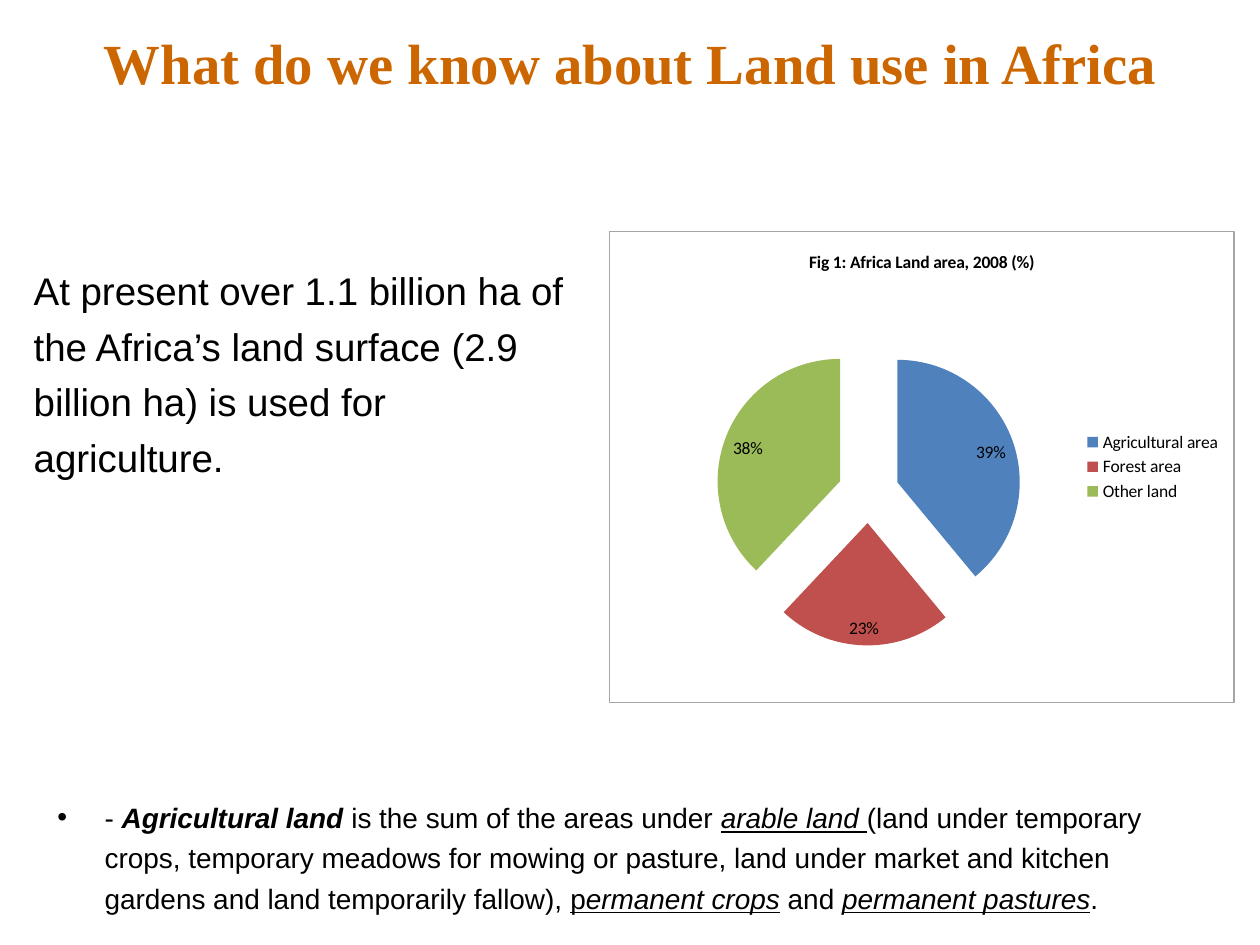
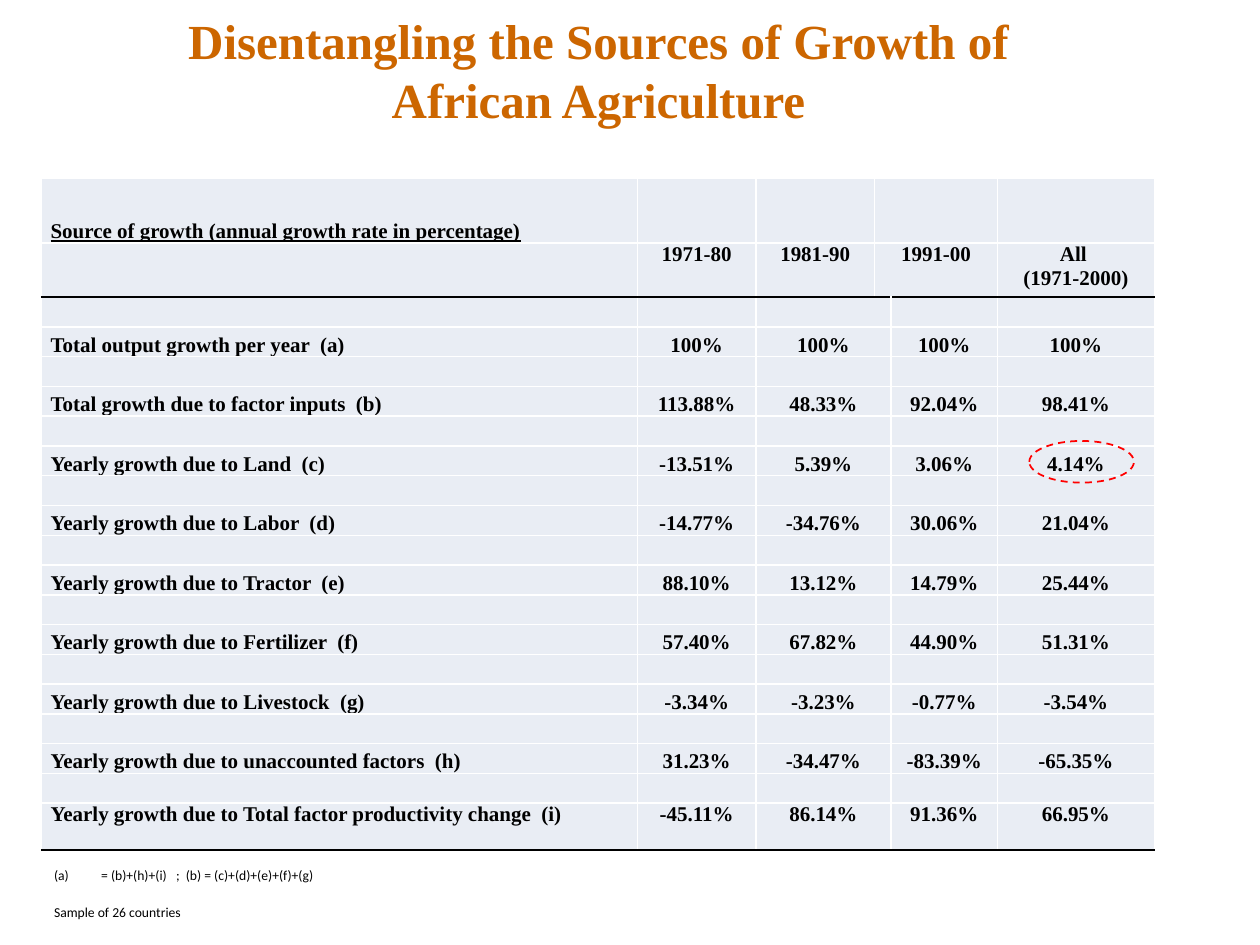
"""Build two slides on land use and sources of growth in African agriculture."""
import pptx
import pptx.util
import pptx.dml.color
import pptx.chart.data
import pptx.enum.chart
import pptx.enum.dml
import pptx.enum.shapes
import pptx.enum.text
import pptx.oxml
import pptx.oxml.ns
from lxml import etree

Cm, Pt = pptx.util.Cm, pptx.util.Pt
RGB = pptx.dml.color.RGBColor.from_string
qn = pptx.oxml.ns.qn
ANCHOR = pptx.enum.text.MSO_ANCHOR
CENTER = pptx.enum.text.PP_ALIGN.CENTER

COLORS = {
    "title": "CC6600", "text": "000000", "cell": "E9EDF4", "grid": "FFFFFF",
    "rule": "000000", "mark": "FF0000", "frame": "A6A6A6",
    "Agricultural area": "4F81BD", "Forest area": "C0504D", "Other land": "9BBB59",
}
SERIF, SANS, SMALL = "Times New Roman", "Arial", "Calibri"


def put(p, text, size, font, color="text", bold=False, italic=False, underline=False, align=None):
    """Add a formatted run to a paragraph."""
    r = p.add_run()
    r.text = text
    r.font.size, r.font.name = Pt(size), font
    r.font.color.rgb = RGB(COLORS[color])
    r.font.bold, r.font.italic, r.font.underline = bold, italic, underline
    if align is not None:
        p.alignment = align


def hang(p, tag, **attrs):
    """Give a paragraph a hanging indent and a bullet."""
    pPr = p._p.get_or_add_pPr()
    pPr.set("marL", str(Cm(0.95)))
    pPr.set("indent", str(-Cm(0.95)))
    etree.SubElement(pPr, qn(tag), **attrs)


prs = pptx.Presentation()
prs.slide_width, prs.slide_height = Cm(25.4), Cm(19.05)

titles = [
    ("What do we know about Land use in Africa", 32.4, 1.27, 22.86, 2.11),
    ("Disentangling the Sources of Growth of African Agriculture", 28, 2.54, 19.05, 2.41),
]
slides = []
for text, size, left, width, height in titles:
    s = prs.slides.add_slide(prs.slide_layouts[6])
    tf = s.shapes.add_textbox(Cm(left), Cm(0.2), Cm(width), Cm(height)).text_frame
    tf.word_wrap = True
    tf.vertical_anchor = ANCHOR.MIDDLE
    put(tf.paragraphs[0], text, size, SERIF, "title", bold=True, align=CENTER)
    slides.append(s)
land, growth = slides

areas = {"Agricultural area": 39, "Forest area": 23, "Other land": 38}
data = pptx.chart.data.CategoryChartData()
data.categories = list(areas)
data.add_series("Series 1", list(areas.values()))
chart = land.shapes.add_chart(pptx.enum.chart.XL_CHART_TYPE.PIE, Cm(12.27), Cm(4.65),
                              Cm(12.62), Cm(9.52), data).chart
chart.font.size, chart.font.name = Pt(10), SMALL
chart.font.color.rgb = RGB(COLORS["text"])
chart.has_title = True
put(chart.chart_title.text_frame.paragraphs[0], "Fig 1: Africa Land area, 2008 (%)", 10, SMALL, bold=True)
chart.chart_title.include_in_layout = False
chart.has_legend = True
chart.legend.position = pptx.enum.chart.XL_LEGEND_POSITION.RIGHT
chart.legend.include_in_layout = False

plot = chart.plots[0]
plot.vary_by_categories = True
plot.has_data_labels = True
labels = plot.data_labels
labels.show_percentage, labels.show_value = True, False
labels.number_format, labels.number_format_is_linked = "0%", False
labels.position = pptx.enum.chart.XL_LABEL_POSITION.INSIDE_END
for i, area in enumerate(areas):
    fill = plot.series[0].points[i].format.fill
    fill.solid()
    fill.fore_color.rgb = RGB(COLORS[area])

space = chart._chartSpace
explosion = etree.Element(qn("c:explosion"), val="25")
space.find(".//" + qn("c:dPt")).addprevious(explosion)
area_xml = space.find(".//" + qn("c:plotArea"))
for old in area_xml.findall(qn("c:layout")):
    area_xml.remove(old)
layout = etree.Element(qn("c:layout"))
manual = etree.SubElement(layout, qn("c:manualLayout"))
for tag, val in [("layoutTarget", "inner"), ("xMode", "edge"), ("yMode", "edge"),
                 ("x", "0.17"), ("y", "0.16"), ("w", "0.49"), ("h", "0.79")]:
    etree.SubElement(manual, qn("c:" + tag), val=val)
area_xml.insert(0, layout)
frame = pptx.oxml.parse_xml(
    f'<c:spPr {pptx.oxml.ns.nsdecls("c", "a")}><a:noFill/><a:ln w="{Pt(0.75)}"><a:solidFill>'
    f'<a:srgbClr val="{COLORS["frame"]}"/></a:solidFill></a:ln></c:spPr>')
space.find(qn("c:txPr")).addprevious(frame)

plain, italic, under = {}, {"italic": True}, {"underline": True}
both = {**italic, **under}
statement = [("At present over 1.1 billion ha of the Africa’s land surface (2.9 billion ha) "
              "is used for agriculture.", plain)]
definition = [
    ("- ", plain), ("Agricultural land ", {"bold": True, "italic": True}),
    ("is the sum of the areas under ", plain), ("arable land", both), (" ", under),
    ("(land under temporary crops, temporary meadows for mowing or pasture, land under market "
     "and kitchen gardens and land temporarily fallow), ", plain),
    ("p", under), ("ermanent crops", both), (" ", italic), ("and ", plain),
    ("permanent pastures", both), (".", plain),
]
for runs, size, left, top, width, height in [(statement, 22, 0.43, 5.08, 11.23, 4.88),
                                             (definition, 16, 0.91, 15.88, 23.85, 2.97)]:
    tf = land.shapes.add_textbox(Cm(left), Cm(top), Cm(width), Cm(height)).text_frame
    tf.word_wrap = True
    p = tf.paragraphs[0]
    p.line_spacing, p.space_before = 1.2, Pt(size * 0.2)
    for text, style in runs:
        put(p, text, size, SANS, **style)
    if runs is definition:
        hang(p, "a:buFont", typeface=SANS)
        etree.SubElement(p._p.pPr, qn("a:buChar"), char="•")

sources = [
    ("Total output growth per year", "100%", "100%", "100%", "100%"),
    ("Total growth due to factor inputs", "113.88%", "48.33%", "92.04%", "98.41%"),
    ("Yearly growth due to Land", "-13.51%", "5.39%", "3.06%", "4.14%"),
    ("Yearly growth due to Labor", "-14.77%", "-34.76%", "30.06%", "21.04%"),
    ("Yearly growth due to Tractor", "88.10%", "13.12%", "14.79%", "25.44%"),
    ("Yearly growth due to Fertilizer", "57.40%", "67.82%", "44.90%", "51.31%"),
    ("Yearly growth due to Livestock", "-3.34%", "-3.23%", "-0.77%", "-3.54%"),
    ("Yearly growth due to unaccounted factors", "31.23%", "-34.47%", "-83.39%", "-65.35%"),
    ("Yearly growth due to Total factor productivity change", "-45.11%", "86.14%", "91.36%", "66.95%"),
]
rows = [["Source of growth (annual growth rate in percentage)", "", "", "", ""],
        ["", "1971-80", "1981-90", "1991-00", "All \n(1971-2000)"]]
for letter, (label, *values) in zip("abcdefghi", sources):
    rows += [[""] * 5, [f"{label}  ({letter})", *values]]
widths = [12.01, 2.39, 2.39, 0.33, 2.15, 3.16]
heights = [1.3, 1.09] + [0.6] * 17 + [0.94]
last = len(rows) - 1

table = growth.shapes.add_table(len(rows), len(widths), Cm(0.84), Cm(3.6),
                                Cm(sum(widths)), Cm(sum(heights))).table
table.first_row = table.horz_banding = False
for column, width in zip(table.columns, widths):
    column.width = Cm(width)
for i, height in enumerate(heights):
    table.rows[i].height = Cm(height)
    in_header = i < 2
    starts = [0, 1, 2, 3, 5] if in_header else [0, 1, 2, 4, 5]
    texts = dict(zip(starts, rows[i]))
    for j in range(len(widths)):
        cell = table.cell(i, j)
        cell.margin_left = cell.margin_right = Cm(0.18)
        cell.margin_top = cell.margin_bottom = 0
        cell.vertical_anchor = ANCHOR.TOP if i in (1, last) else ANCHOR.BOTTOM
        tf = cell.text_frame
        lines = texts.get(j, "").split("\n")
        for k, line in enumerate(lines):
            p = tf.paragraphs[0] if k == 0 else tf.add_paragraph()
            if line:
                put(p, line, 12, SERIF, bold=True, underline=i == 0, align=CENTER if j else None)
            else:
                etree.SubElement(p._p, qn("a:endParaRPr"), sz="1000")
        tcPr = cell._tc.get_or_add_tcPr()
        for side in "LRTB":
            ruled = (side == "B" and i in (1, last)) or (side == "T" and i == 2)
            ln = etree.SubElement(tcPr, qn("a:ln" + side), w=str(Pt(1)))
            solid = etree.SubElement(ln, qn("a:solidFill"))
            etree.SubElement(solid, qn("a:srgbClr"), val=COLORS["rule" if ruled else "grid"])
        cell.fill.solid()
        cell.fill.fore_color.rgb = RGB(COLORS["cell"])
    first = 3 if in_header else 2
    table.cell(i, first).merge(table.cell(i, first + 1))

sp = growth.shapes.add_shape(pptx.enum.shapes.MSO_SHAPE.OVAL, Cm(20.75), Cm(8.89), Cm(2.11), Cm(0.84))
sp.shadow.inherit = False
sp.fill.background()
sp.line.color.rgb = RGB(COLORS["mark"])
sp.line.width = Pt(1)
sp.line.dash_style = pptx.enum.dml.MSO_LINE.DASH

tf = growth.shapes.add_textbox(Cm(0.84), Cm(17.35), Cm(22.86), Cm(1.27)).text_frame
tf.word_wrap = True
p = tf.paragraphs[0]
put(p, "= (b)+(h)+(i)   ;  (b) = (c)+(d)+(e)+(f)+(g)", 7.8, SMALL)
p.space_before = Pt(1.5)
hang(p, "a:buAutoNum", type="alphaLcParenBoth")
p = tf.add_paragraph()
p.space_before = Pt(12)
put(p, "Sample of 26 countries", 7.8, SMALL)

prs.save("out.pptx")
